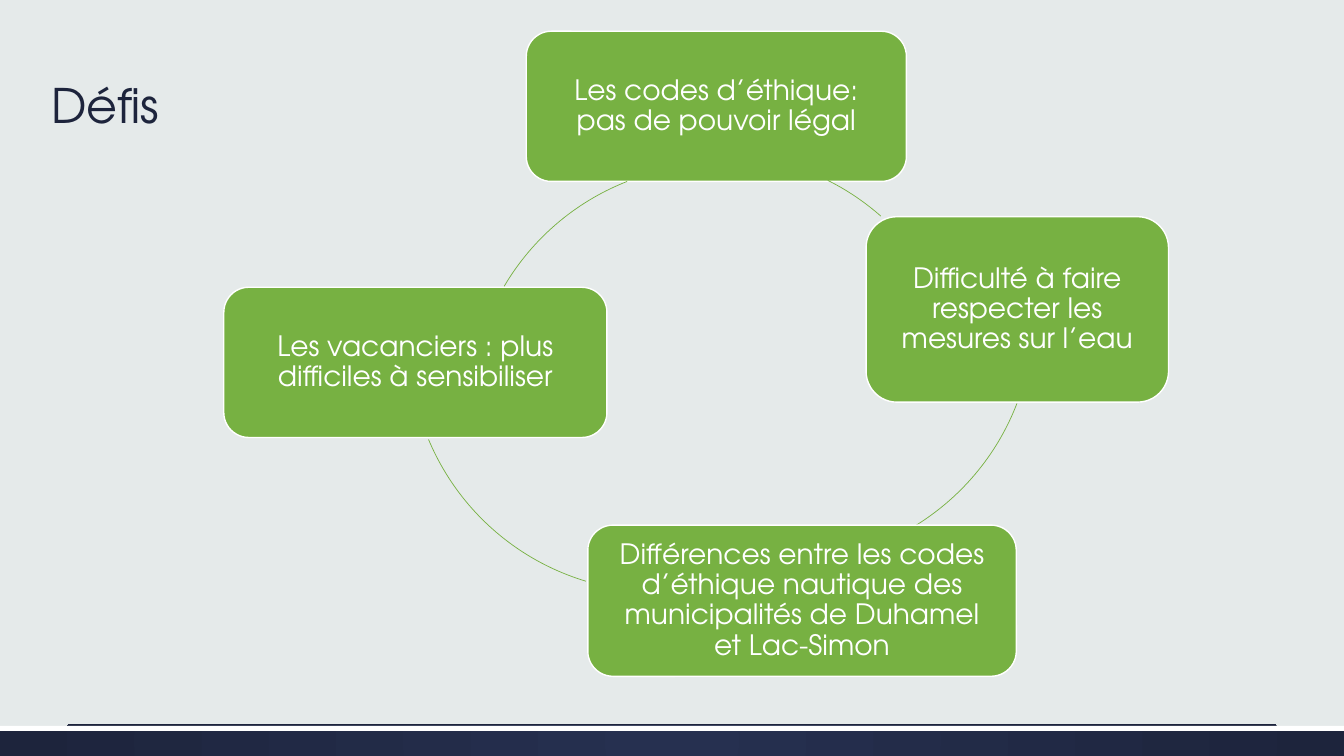
import math

from lxml import etree
from pptx import Presentation
from pptx import util as u
from pptx.dml.color import RGBColor
from pptx.enum import shapes, text
from pptx.oxml import parse_xml
from pptx.oxml.ns import nsdecls, qn

NAVY, NAVY_LIGHT, GREEN, WHITE, PALE = "1D243C", "263050", "77B142", "FFFFFF", "E5EAEA"
RING = 4.92


def rgb(value):
    return RGBColor.from_string(value)


class Slide:
    font = "TeX Gyre Adventor"

    def __init__(self, prs, background):
        self.s = prs.slides.add_slide(prs.slide_layouts[6])
        fill = self.s.background.fill
        fill.solid()
        fill.fore_color.rgb = rgb(background)

    def shape(self, kind, box, fill=None, line=None, weight=1):
        sp = self.s.shapes.add_shape(kind, *map(u.Inches, box))
        sp.shadow.inherit = False
        if fill:
            sp.fill.solid()
            sp.fill.fore_color.rgb = rgb(fill)
        else:
            sp.fill.background()
        if line:
            sp.line.color.rgb = rgb(line)
            sp.line.width = u.Pt(weight)
        else:
            sp.line.fill.background()
        return sp

    def glow_band(self, box, inner, outer):
        """Add a rectangle whose gradient spreads from its centre."""
        sp = self.shape(shapes.MSO_SHAPE.RECTANGLE, box)
        sp.fill.gradient()
        for stop, color in zip(sp.fill.gradient_stops, (inner, outer)):
            stop.color.rgb = rgb(color)
        grad = sp._element.spPr.find(qn("a:gradFill"))
        grad.replace(grad.find(qn("a:lin")), parse_xml(
            f'<a:path {nsdecls("a")} path="circle">'
            '<a:fillToRect l="50000" t="50000" r="50000" b="50000"/></a:path>'))

    def set_text(self, sp, words, size, color, align, anchor, inset):
        tf = sp.text_frame
        tf.word_wrap = True
        tf.vertical_anchor = anchor
        tf.margin_left = tf.margin_right = u.Inches(inset)
        tf.margin_top = tf.margin_bottom = u.Inches(inset)
        p = tf.paragraphs[0]
        p.text = words
        p.alignment = align
        p.line_spacing = 0.9
        p.font.name, p.font.size = self.font, u.Pt(size)
        p.font.color.rgb = rgb(color)

    def title(self, words, box):
        sp = self.s.shapes.add_textbox(*map(u.Inches, box))
        self.set_text(sp, words, 34, NAVY, text.PP_ALIGN.LEFT, text.MSO_ANCHOR.BOTTOM, 0.1)

    def card(self, words, box):
        sp = self.shape(shapes.MSO_SHAPE.ROUNDED_RECTANGLE, box, GREEN, WHITE)
        self.set_text(sp, words, 20, WHITE, text.PP_ALIGN.CENTER, text.MSO_ANCHOR.MIDDLE, 0.15)

    def arc(self, left, top, start, end):
        """Add the clockwise part of a ring between two points."""
        sp = self.shape(shapes.MSO_SHAPE.ARC, (left, top, RING, RING), line=GREEN, weight=0.5)
        for i, (x, y) in enumerate((start, end)):
            angle = math.degrees(math.atan2(y - top - RING / 2, x - left - RING / 2)) % 360
            sp.adjustments[i] = angle * 0.6  # 60000 units a degree, scaled by 100000

    def rule(self, x1, x2, y):
        c = self.s.shapes.add_connector(
            shapes.MSO_CONNECTOR.STRAIGHT, *map(u.Inches, (x1, y, x2, y)))
        c.line.color.rgb = rgb(NAVY)
        c.line.width = u.Pt(0.75)
        etree.SubElement(c._element.spPr, qn("a:effectLst"))


CYCLE = [
    ("Les codes d’éthique: pas de pouvoir légal", (5.22, 0.31, 3.77, 1.49),
     (4.65, 1.53, (8.21, 1.79), (8.73, 2.15))),
    ("Difficulté à faire respecter les mesures sur l’eau", (8.59, 2.15, 3, 1.84),
     (5.33, 0.66, (10.08, 4), (9.08, 5.21))),
    ("Différences entre les codes d’éthique nautique des municipalités de Duhamel et Lac-Simon",
     (5.83, 5.21, 4.25, 1.5), (4.06, 0.95, (5.81, 5.77), (4.25, 4.36))),
    ("Les vacanciers : plus difficiles à sensibiliser", (2.22, 2.85, 3.8, 1.49),
     (4.66, 1.63, (5, 2.84), (6.22, 1.8))),
]


def main():
    prs = Presentation()
    prs.slide_width, prs.slide_height = u.Inches(13.33), u.Inches(7.5)
    slide = Slide(prs, PALE)
    slide.glow_band((0, 7.2, 13.33, 0.3), NAVY_LIGHT, NAVY)
    slide.shape(shapes.MSO_SHAPE.RECTANGLE, (0, 7.2, 13.33, 0.05), WHITE)
    slide.rule(0.67, 12.66, 7.19)
    slide.title("Défis", (0.41, 0.08, 10.4, 1.35))
    for words, box, link in CYCLE:
        slide.card(words, box)
        slide.arc(*link)
    prs.save("out.pptx")


if __name__ == "__main__":
    main()
